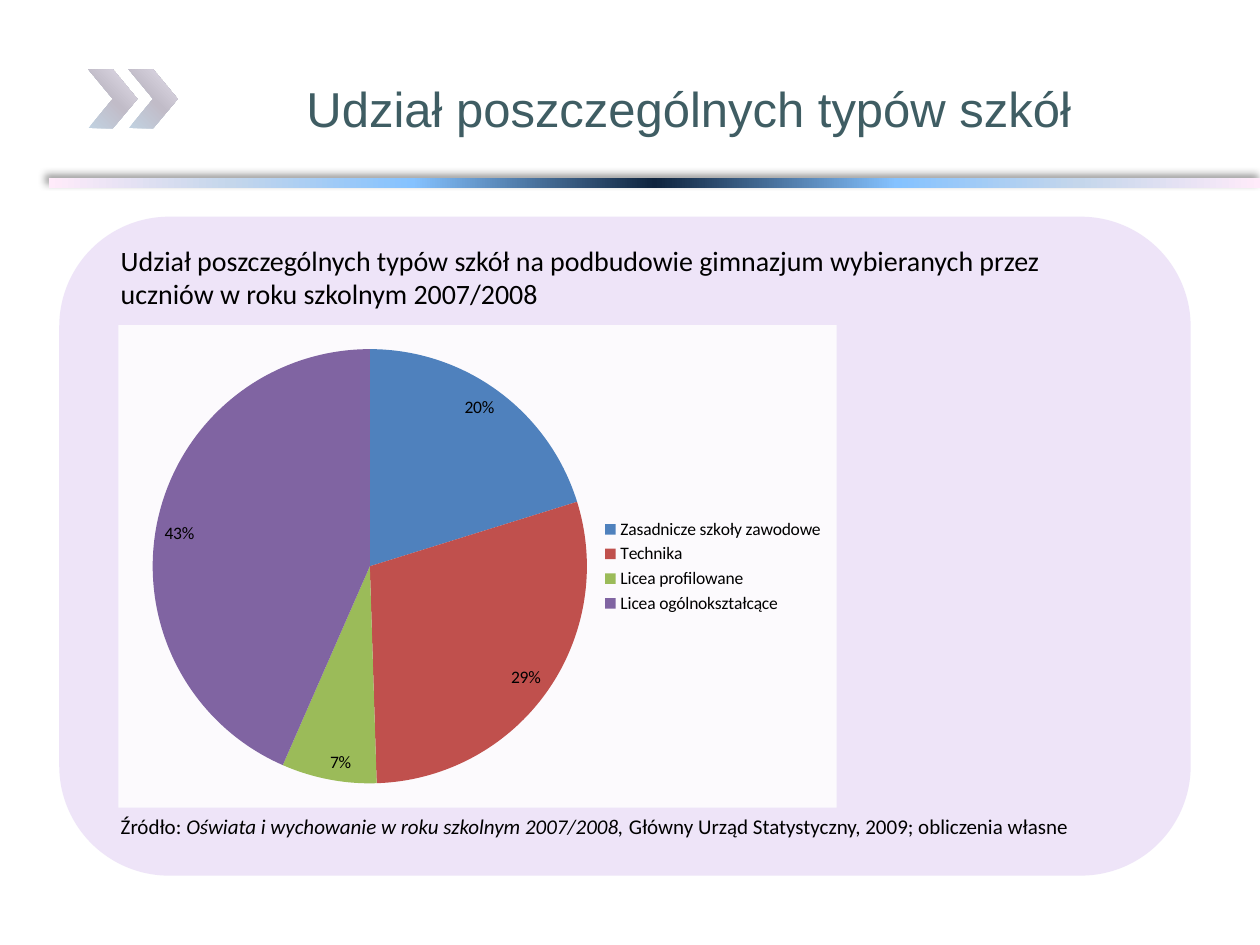
import lxml.etree
import pptx
import pptx.chart.data
import pptx.dml.color
import pptx.enum.chart
import pptx.enum.shapes
import pptx.enum.text
import pptx.oxml
import pptx.oxml.ns
import pptx.util

Inches = pptx.util.Inches
qn = pptx.oxml.ns.qn
SHAPE = pptx.enum.shapes.MSO_SHAPE
NS = pptx.oxml.ns.nsdecls("a", "c")

CHEVRON_STOPS = [(0, "C1D2E1"), (50, "C1BCC8"), (100, "E6DFED")]
HALF_BAR = [(0, "FFEBFA"), (15, "C4D6EB"), (30, "85C2FF")]
BAR_STOPS = HALF_BAR + [(50, "0F243E")] + [(100 - p, c) for p, c in reversed(HALF_BAR)]
SCHOOL_SHARES = {
    "Zasadnicze szkoły zawodowe": (20, "4F81BD"),
    "Technika": (29, "C0504D"),
    "Licea profilowane": (7, "9BBB59"),
    "Licea ogólnokształcące": (43, "8064A2"),
}


def rgb(value):
    return pptx.dml.color.RGBColor.from_string(value)


def apply_format(target, values):
    for name, value in values.items():
        setattr(target, name, value)


def color_xml(color, alpha=100):
    return f'<a:srgbClr val="{color}"><a:alpha val="{alpha * 1000}"/></a:srgbClr>'


def add_panel(slide, kind, box):
    panel = slide.shapes.add_shape(kind, *map(Inches, box))
    panel.shadow.inherit = False
    panel.line.fill.background()
    return panel


def set_fill_xml(shape, xml):
    """Swap the shape's fill for one that needs raw XML."""
    shape.fill.background()
    properties = shape._element.spPr
    properties.replace(properties.find(qn("a:noFill")), pptx.oxml.parse_xml(xml))


def set_gradient(shape, stops, angle):
    stop_xml = "".join(f'<a:gs pos="{p * 1000}">{color_xml(c)}</a:gs>' for p, c in stops)
    set_fill_xml(shape, f'<a:gradFill {NS} rotWithShape="1"><a:gsLst>{stop_xml}</a:gsLst>'
                        f'<a:lin ang="{angle * 60000}" scaled="0"/></a:gradFill>')


def add_shadow(shape, color, alpha, blur, distance, angle):
    effects = shape._element.spPr.find(qn("a:effectLst"))
    effects.append(pptx.oxml.parse_xml(
        f'<a:outerShdw {NS} blurRad="{pptx.util.Pt(blur)}" dist="{pptx.util.Pt(distance)}" '
        f'dir="{angle * 60000}" algn="br" rotWithShape="0">{color_xml(color, alpha)}</a:outerShdw>'))


def add_text(slide, box, runs, size, font="Calibri", color="000000"):
    """Add one wrapped paragraph of (text, italic) runs."""
    frame = slide.shapes.add_textbox(*map(Inches, box)).text_frame
    frame.word_wrap = True
    for text, italic in runs:
        run = frame.paragraphs[0].add_run()
        run.text = text
        apply_format(run.font, {"name": font, "size": pptx.util.Pt(size), "italic": italic})
        run.font.color.rgb = rgb(color)
    return frame


def add_title(slide):
    frame = add_text(slide, (1.95, 0.23, 7.03, 1.25),
                     [("Udział poszczególnych typów szkół", False)], 28, "Arial", "3F5D63")
    frame.vertical_anchor = pptx.enum.text.MSO_ANCHOR.MIDDLE
    paragraph = frame.paragraphs[0]
    paragraph.alignment = pptx.enum.text.PP_ALIGN.CENTER
    paragraph._p.get_or_add_pPr().set("indent", str(Inches(-0.19)))


def set_plot_layout(chart, x, y, w, h):
    plot_area = chart._chartSpace.chart.plotArea
    for layout in plot_area.findall(qn("c:layout")):
        plot_area.remove(layout)
    extents = "".join(f'<c:{name} val="{value}"/>'
                      for name, value in zip("xywh", (x, y, w, h)))
    plot_area.insert(0, pptx.oxml.parse_xml(
        f'<c:layout {NS}><c:manualLayout><c:layoutTarget val="inner"/>'
        f'<c:xMode val="edge"/><c:yMode val="edge"/>{extents}</c:manualLayout></c:layout>'))


def set_chart_background(chart, color, alpha):
    """Needs the chart font to be set first, as the fill comes just before it."""
    chart._chartSpace.find(qn("c:txPr")).addprevious(pptx.oxml.parse_xml(
        f'<c:spPr {NS}><a:solidFill>{color_xml(color, alpha)}</a:solidFill>'
        '<a:ln><a:noFill/></a:ln></c:spPr>'))


def add_share_pie(slide):
    data = pptx.chart.data.CategoryChartData()
    data.categories = list(SCHOOL_SHARES)
    data.add_series("Series 1", [share for share, _ in SCHOOL_SHARES.values()])
    chart = slide.shapes.add_chart(pptx.enum.chart.XL_CHART_TYPE.PIE,
                                   *map(Inches, (0.94, 2.58, 5.7, 3.83)), data).chart
    apply_format(chart, {"has_title": False, "has_legend": True})
    apply_format(chart.font, {"name": "Calibri", "size": pptx.util.Pt(10)})
    chart.font.color.rgb = rgb("000000")
    apply_format(chart.legend, {"position": pptx.enum.chart.XL_LEGEND_POSITION.RIGHT,
                                "include_in_layout": False})
    plot = chart.plots[0]
    apply_format(plot, {"vary_by_categories": True, "has_data_labels": True})
    apply_format(plot.data_labels, {
        "show_percentage": True, "show_value": False,
        "number_format": "0%", "number_format_is_linked": False,
        "position": pptx.enum.chart.XL_LABEL_POSITION.INSIDE_END})
    for index, (_, color) in enumerate(SCHOOL_SHARES.values()):
        fill = plot.series[0].points[index].format.fill
        fill.solid()
        fill.fore_color.rgb = rgb(color)
    set_plot_layout(chart, 0.04, 0.05, 0.62, 0.9)
    set_chart_background(chart, "FFFFFF", 83)


def main():
    deck = pptx.Presentation()
    apply_format(deck, {"slide_width": Inches(10), "slide_height": Inches(7.5)})
    slide = deck.slides.add_slide(deck.slide_layouts[6])

    divider = add_panel(slide, SHAPE.RECTANGLE, (0.39, 1.41, 9.61, 0.08))
    set_gradient(divider, BAR_STOPS, 0)
    add_shadow(divider, "000000", 40, blur=4, distance=3, angle=225)
    for left in (1.02, 0.7):
        chevron = add_panel(slide, SHAPE.CHEVRON, (left, 0.55, 0.39, 0.47))
        set_gradient(chevron, CHEVRON_STOPS, 315)
    backdrop = add_panel(slide, SHAPE.ROUNDED_RECTANGLE, (0.47, 1.72, 8.98, 5.23))
    set_fill_xml(backdrop, f'<a:solidFill {NS}>{color_xml("E5D7F5", 65)}</a:solidFill>')

    add_text(slide, (0.86, 1.88, 8.2, 0.91),
             [("Udział poszczególnych typów szkół na podbudowie gimnazjum wybieranych "
               "przez uczniów w roku szkolnym 2007/2008", False)], 16)
    add_text(slide, (0.86, 6.41, 8.2, 0.91),
             [("Źródło: ", False),
              ("Oświata i wychowanie w roku szkolnym 2007/2008,", True),
              (" Główny Urząd Statystyczny, 2009; obliczenia własne", False)], 12)
    add_title(slide)
    add_share_pie(slide)
    deck.save("out.pptx")


if __name__ == "__main__":
    main()
